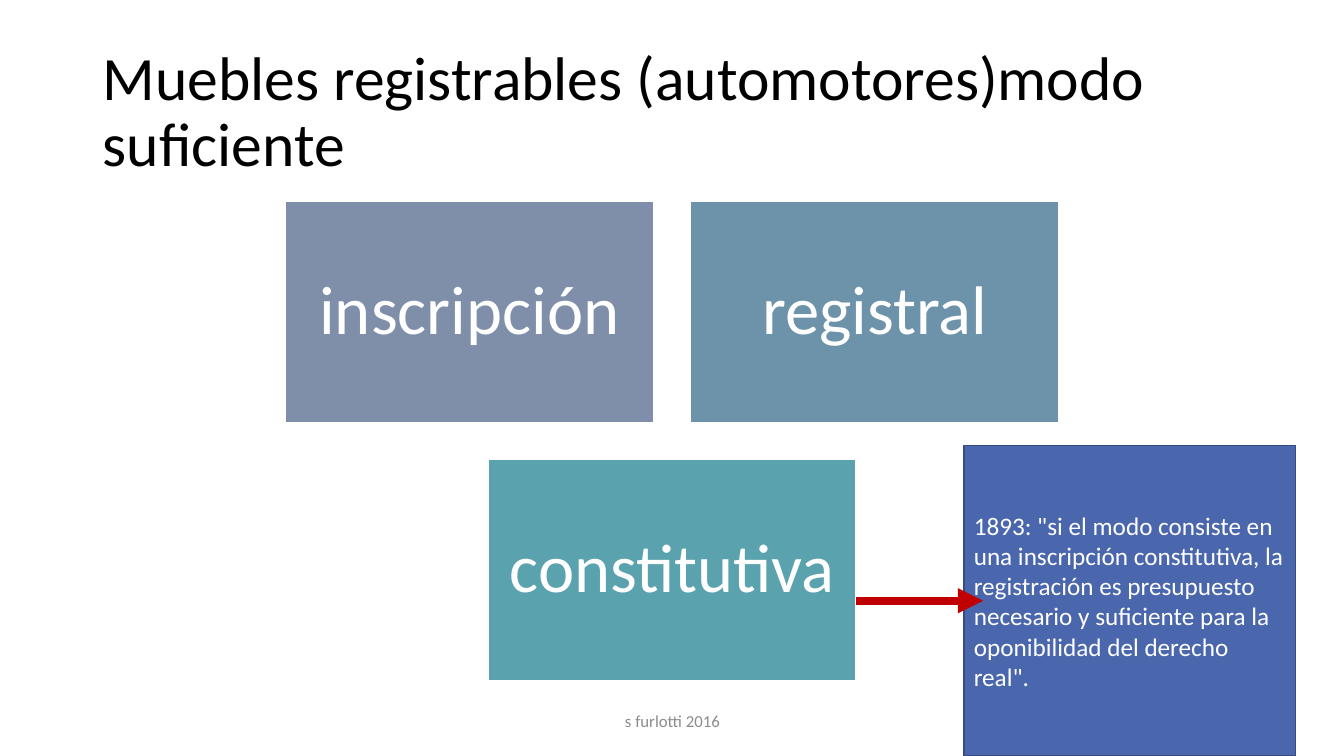
"""Build the slide on registrable movables and constitutive registration."""
from dataclasses import dataclass

import pptx
import pptx.dml.color
import pptx.enum.shapes
import pptx.enum.text
import pptx.oxml
import pptx.oxml.ns
import pptx.util

PX = 9144
ALIGN = pptx.enum.text.PP_ALIGN
RECTANGLE = pptx.enum.shapes.MSO_SHAPE.RECTANGLE


@dataclass(frozen=True)
class Theme:
    """Colours, font and type sizes of the slide."""
    font: str = "Calibri"
    ink: str = "000000"
    white: str = "FFFFFF"
    muted: str = "8C8C8C"
    note: str = "4A66AC"
    note_edge: str = "374B7F"
    arrow: str = "C00000"
    cards: tuple = ("7F8FA9", "6D93AB", "5AA2AE")
    title_size: int = 44
    card_size: int = 49
    note_size: int = 18
    footer_size: int = 12


THEME = Theme()


def rgb(code):
    """Return the colour for a hex code."""
    return pptx.dml.color.RGBColor.from_string(code)


def emu(*lengths):
    """Turn px lengths into EMU."""
    return [pptx.util.Emu(length * PX) for length in lengths]


def write(holder, wording, size, color, align=ALIGN.LEFT, spacing=1.0, inset=(10, 5)):
    """Write one vertically centred paragraph into a shape."""
    frame = holder.text_frame
    frame.word_wrap = True
    frame.vertical_anchor = pptx.enum.text.MSO_ANCHOR.MIDDLE
    frame.margin_left = frame.margin_right = emu(inset[0])[0]
    frame.margin_top = frame.margin_bottom = emu(inset[1])[0]
    paragraph = frame.paragraphs[0]
    paragraph.text = wording
    paragraph.alignment = align
    paragraph.line_spacing = spacing
    paragraph.font.name = THEME.font
    paragraph.font.size = pptx.util.Pt(size)
    paragraph.font.color.rgb = rgb(color)


def add_panel(slide, box, fill, edge):
    """Add a flat outlined rectangle."""
    panel = slide.shapes.add_shape(RECTANGLE, *emu(*box))
    panel.shadow.inherit = False
    panel.fill.solid()
    panel.fill.fore_color.rgb = rgb(fill)
    panel.line.color.rgb = rgb(edge)
    panel.line.width = pptx.util.Pt(1)
    return panel


def add_title(slide, box):
    """Add the slide title."""
    title = slide.shapes.add_textbox(*emu(*box))
    write(title, "Muebles registrables (automotores)modo suficiente",
          THEME.title_size, THEME.ink, spacing=0.9)


def add_cards(slide, box):
    """Add two cards above a third centred below them."""
    left, top, width, height = box
    gap = 37
    card_width, card_height = (width - gap) // 2, (height - gap) // 2
    step = card_width + gap
    spots = ((0, 0), (step, 0), (step // 2, card_height + gap))
    words = ("inscripción", "registral", "constitutiva")
    for word, fill, (dx, dy) in zip(words, THEME.cards, spots):
        card = add_panel(slide, (left + dx, top + dy, card_width, card_height),
                         fill, THEME.white)
        write(card, word, THEME.card_size, THEME.white, ALIGN.CENTER, 0.9, (20, 20))


def add_note(slide, box):
    """Add the quoted article and the arrow that reaches into it."""
    left, top, _, height = box
    note = add_panel(slide, box, THEME.note, THEME.note_edge)
    write(note, '1893: "si el modo consiste en una inscripción constitutiva, '
          'la registración es presupuesto necesario y suficiente para la '
          'oponibilidad del derecho real".', THEME.note_size, THEME.white)
    middle = top + height // 2
    arrow = slide.shapes.add_connector(
        pptx.enum.shapes.MSO_CONNECTOR.STRAIGHT,
        *emu(left - 107, middle, left + 19, middle))
    arrow.line.color.rgb = rgb(THEME.arrow)
    arrow.line.width = pptx.util.Pt(6)
    head = pptx.oxml.parse_xml(
        f'<a:tailEnd {pptx.oxml.ns.nsdecls("a")} type="triangle"/>')
    arrow.line._get_or_add_ln().append(head)
    arrow._element.spPr.append(
        pptx.oxml.parse_xml(f'<a:effectLst {pptx.oxml.ns.nsdecls("a")}/>'))


def add_footer(slide, box):
    """Add the centred footer."""
    footer = slide.shapes.add_textbox(*emu(*box))
    write(footer, "s furlotti 2016", THEME.footer_size, THEME.muted, ALIGN.CENTER)


def main():
    """Build and save the slide."""
    deck = pptx.Presentation()
    deck.slide_width, deck.slide_height = emu(1333, 750)
    slide = deck.slides.add_slide(deck.slide_layouts[6])
    add_title(slide, (92, 40, 1150, 145))
    add_cards(slide, (283, 200, 767, 475))
    add_note(slide, (956, 442, 329, 308))
    add_footer(slide, (442, 695, 450, 40))
    deck.save("out.pptx")


if __name__ == "__main__":
    main()
